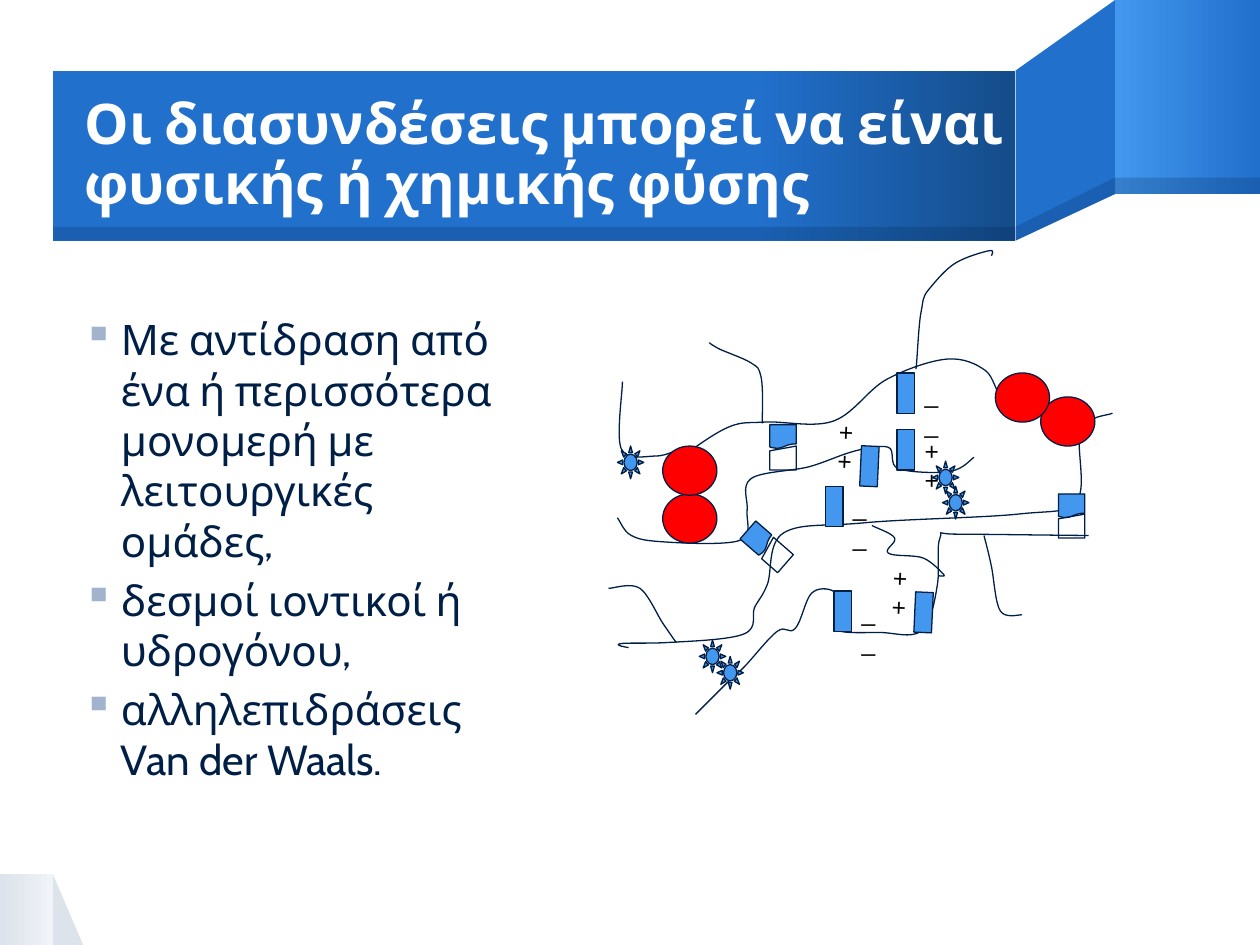
from copy import deepcopy
from dataclasses import dataclass

from pptx import Presentation
from pptx.dml.color import RGBColor
from pptx.enum.shapes import MSO_SHAPE as SHAPE
from pptx.enum.text import MSO_ANCHOR as ANCHOR, MSO_AUTO_SIZE as AUTO_SIZE, PP_ALIGN as ALIGN
from pptx.oxml.ns import qn
from pptx.oxml.xmlchemy import OxmlElement
from pptx.util import Pt

PX = 9144  # one px is a hundredth of an inch
PAGE = (1000, 750)


@dataclass(frozen=True)
class Theme:
    navy: str = "001F46"
    blue: str = "2170CC"
    deep: str = "154C8A"
    sky: str = "4397EE"
    red: str = "FF0000"
    mist: str = "DDE3EB"
    haze: str = "F0F3F7"
    bullet: str = "A1B3CD"
    white: str = "FFFFFF"
    black: str = "000000"
    font: str = "Cabin"
    sign_font: str = "Arial"
    title_size: int = 32
    body_size: int = 24
    sign_size: int = 14
    line_width: float = 0.75


THEME = Theme()

TITLE = "Οι διασυνδέσεις μπορεί να είναι φυσικής ή χημικής φύσης"
BULLETS = [
    "Με αντίδραση από ένα ή περισσότερα μονομερή με λειτουργικές ομάδες,",
    "δεσμοί ιοντικοί ή υδρογόνου,",
    "αλληλεπιδράσεις Van der Waals.",
]

# Polymer chains: the points that each smooth line runs through
CHAINS = [
    [(727, 293), (731, 248), (737, 230), (758, 209), (785, 199), (787, 203)],
    [(526, 374), (574, 341), (607, 335), (662, 334), (704, 301), (752, 285),
     (782, 294), (796, 316), (817, 317)],
    [(490, 411), (501, 425), (525, 430), (587, 429), (593, 405), (596, 380),
     (644, 370), (675, 359), (705, 355), (713, 372), (755, 374), (773, 363)],
    [(536, 358), (520, 362), (493, 356), (494, 303)],
    [(883, 328), (858, 341), (855, 397), (809, 408), (686, 415), (622, 423),
     (609, 464), (599, 482), (591, 503), (530, 510), (492, 511), (499, 514)],
    [(864, 425), (760, 424), (746, 427), (744, 464), (731, 501), (698, 502),
     (664, 500), (669, 483), (661, 469), (644, 471), (631, 499), (617, 501),
     (590, 530), (576, 543), (552, 567)],
    [(537, 510), (527, 496), (508, 467), (483, 467)],
    [(692, 417), (710, 427), (705, 439), (733, 443), (749, 456), (745, 457)],
    [(605, 336), (604, 299), (596, 288), (569, 276), (563, 272)],
    [(781, 425), (787, 450), (794, 485), (811, 488)],
]
# Filled half, open half, size, rotation
BONDS = [
    ((611, 337), (611, 354), (21, 19), 0),
    ((840, 392), (840, 408), (21, 19), 0),
    ((592, 417), (606, 430), (19, 21), 311.1),
]
BALLS = [(526, 392), (526, 354), (826, 315), (790, 296)]
SUNS = [(555, 508), (569, 521), (740, 366), (748, 386), (490, 354)]
# Charged groups: left, top, rotation, signs
CHARGES = [
    (712, 341, 0, "++"), (712, 296, 0, "__"), (662, 469, 0, "__"), (655, 386, 0, "__"),
    (726, 470, 182.6, "++"), (683, 354, 182.6, "++"),
]


def color(code):
    return RGBColor.from_string(code)


def scaled(*lengths):
    return [length * PX for length in lengths]


def paint(shape, fill=None, outlined=False, opacity=100):
    """Fill with a colour, with (position, colour) stops, or not at all."""
    shape.shadow.inherit = False
    if fill is None:
        shape.fill.background()
    elif isinstance(fill, str):
        shape.fill.solid()
        shape.fill.fore_color.rgb = color(fill)
        if opacity < 100:
            alpha = OxmlElement("a:alpha")
            alpha.set("val", str(opacity * 1000))
            shape._element.spPr.find(".//" + qn("a:srgbClr")).append(alpha)
    else:
        shape.fill.gradient()
        shape.fill.gradient_angle = 0
        stop_list = shape._element.spPr.find(".//" + qn("a:gsLst"))
        for _ in fill[2:]:
            stop_list.append(deepcopy(stop_list[0]))
        for stop, (position, code) in zip(shape.fill.gradient_stops, fill):
            stop.position = position
            stop.color.rgb = color(code)
    if outlined:
        shape.line.color.rgb = color(THEME.navy)
        shape.line.width = Pt(THEME.line_width)
    else:
        shape.line.fill.background()


def add_preset(page, kind, frame, fill=None, rotation=0, **style):
    shape = page.shapes.add_shape(kind, *scaled(*frame))
    shape.rotation = rotation
    paint(shape, fill, **style)


def add_outline(page, points, closed=False):
    builder = page.shapes.build_freeform(*points[0], scale=PX)
    builder.add_line_segments(points[1:], close=closed)
    return builder.convert_to_shape()


def smooth(points):
    """Put two Bézier handles between neighbours, following the Catmull-Rom rule."""
    padded = [points[0], *points, points[-1]]
    result = [points[0]]
    for before, start, end, after in zip(padded, padded[1:], padded[2:], padded[3:]):
        leave = tuple(s + (e - b) / 6 for b, s, e in zip(before, start, end))
        arrive = tuple(e - (a - s) / 6 for s, e, a in zip(start, end, after))
        result += [leave, arrive, end]
    return result


def add_chain(page, points):
    """Draw an open outline and turn each three of its segments into a curve."""
    shape = add_outline(page, smooth(points))
    segments = shape._element.findall(".//" + qn("a:lnTo"))
    for trio in zip(*[iter(segments)] * 3):
        curve = OxmlElement("a:cubicBezTo")
        trio[0].addprevious(curve)
        for segment in trio:
            curve.append(segment[0])
            segment.getparent().remove(segment)
    paint(shape, outlined=True)


def add_span(para, text, font, size, code, bold=False):
    span = para.add_run()
    span.text = text
    span.font.name, span.font.size, span.font.bold = font, Pt(size), bold
    span.font.color.rgb = color(code)


def clear_margins(frame):
    frame.margin_left = frame.margin_right = frame.margin_top = frame.margin_bottom = 0
    frame.word_wrap = True


def add_ribbon(page):
    t = THEME
    shade = dict(fill=t.navy, opacity=20)
    add_preset(page, SHAPE.RIGHT_TRIANGLE, (42, 694, 24, 56), t.mist)
    add_preset(page, SHAPE.RECTANGLE, (0, 694, 42, 56), [(0, t.mist), (1, t.haze)])
    fold = [(885, 0), (806, 56), (806, 191), (885, 154)]
    paint(add_outline(page, fold, closed=True), t.blue)
    add_preset(page, SHAPE.RECTANGLE, (885, 0, 115, 154), [(0, t.sky), (1, t.blue)])
    add_preset(page, SHAPE.RECTANGLE, (42, 56, 764, 135),
               [(0, t.blue), (0.73, t.blue), (1, t.deep)])
    fold_edge = [(885, 141), (806, 180), (806, 191), (885, 154)]
    paint(add_outline(page, fold_edge, closed=True), **shade)
    for frame in [(885, 141, 115, 13), (42, 180, 764, 11)]:
        add_preset(page, SHAPE.RECTANGLE, frame, **shade)


def add_title(page):
    title = page.shapes.title
    title.left, title.top, title.width, title.height = scaled(67, 57, 739, 134)
    page.shapes._spTree.append(title._element)  # in front of the ribbon
    frame = title.text_frame
    clear_margins(frame)
    frame.vertical_anchor = ANCHOR.MIDDLE
    para = frame.paragraphs[0]
    para.alignment = ALIGN.LEFT
    para.line_spacing = 0.9
    add_span(para, TITLE, THEME.font, THEME.title_size, THEME.white, bold=True)


def add_bullets(page):
    frame = page.shapes.add_textbox(*scaled(66, 249, 348, 396)).text_frame
    clear_margins(frame)
    for index, text in enumerate(BULLETS):
        para = frame.add_paragraph() if index else frame.paragraphs[0]
        para.space_before = Pt(THEME.body_size * 0.2)
        props = para._p.get_or_add_pPr()
        props.set("marL", str(30 * PX))
        props.set("indent", str(-30 * PX))
        tint, code, mark = map(OxmlElement, ("a:buClr", "a:srgbClr", "a:buChar"))
        code.set("val", THEME.bullet)
        mark.set("char", "▪")
        tint.append(code)
        props.extend([tint, mark])
        add_span(para, text, THEME.font, THEME.body_size, THEME.navy)


def add_charge(page, left, top, rotation, signs):
    add_preset(page, SHAPE.RECTANGLE, (left, top, 14, 32), THEME.sky, rotation, outlined=True)
    shift = (-23, -9) if rotation else (12, 0)
    box = page.shapes.add_textbox(*scaled(left + shift[0], top + shift[1], 26, 40))
    box.rotation = rotation
    frame = box.text_frame
    frame.word_wrap = True
    frame.auto_size = AUTO_SIZE.SHAPE_TO_FIT_TEXT
    add_span(frame.paragraphs[0], signs, THEME.sign_font, THEME.sign_size, THEME.black)


def add_network(page):
    for points in CHAINS:
        add_chain(page, points)
    for filled, hollow, size, rotation in BONDS:
        add_preset(page, SHAPE.FLOWCHART_DOCUMENT, filled + size, THEME.sky, rotation, outlined=True)
        add_preset(page, SHAPE.FLOWCHART_MANUAL_INPUT, hollow + size, None, rotation, outlined=True)
    for corner in BALLS:
        add_preset(page, SHAPE.OVAL, corner + (43, 39), THEME.red, outlined=True)
    for charge in CHARGES:
        add_charge(page, *charge)
    for corner in SUNS:
        add_preset(page, SHAPE.SUN, corner + (21, 26), THEME.sky, outlined=True)


def main():
    deck = Presentation()
    deck.slide_width, deck.slide_height = scaled(*PAGE)
    page = deck.slides.add_slide(deck.slide_layouts[5])
    add_ribbon(page)
    add_title(page)
    add_bullets(page)
    add_network(page)
    deck.save("out.pptx")


if __name__ == "__main__":
    main()
